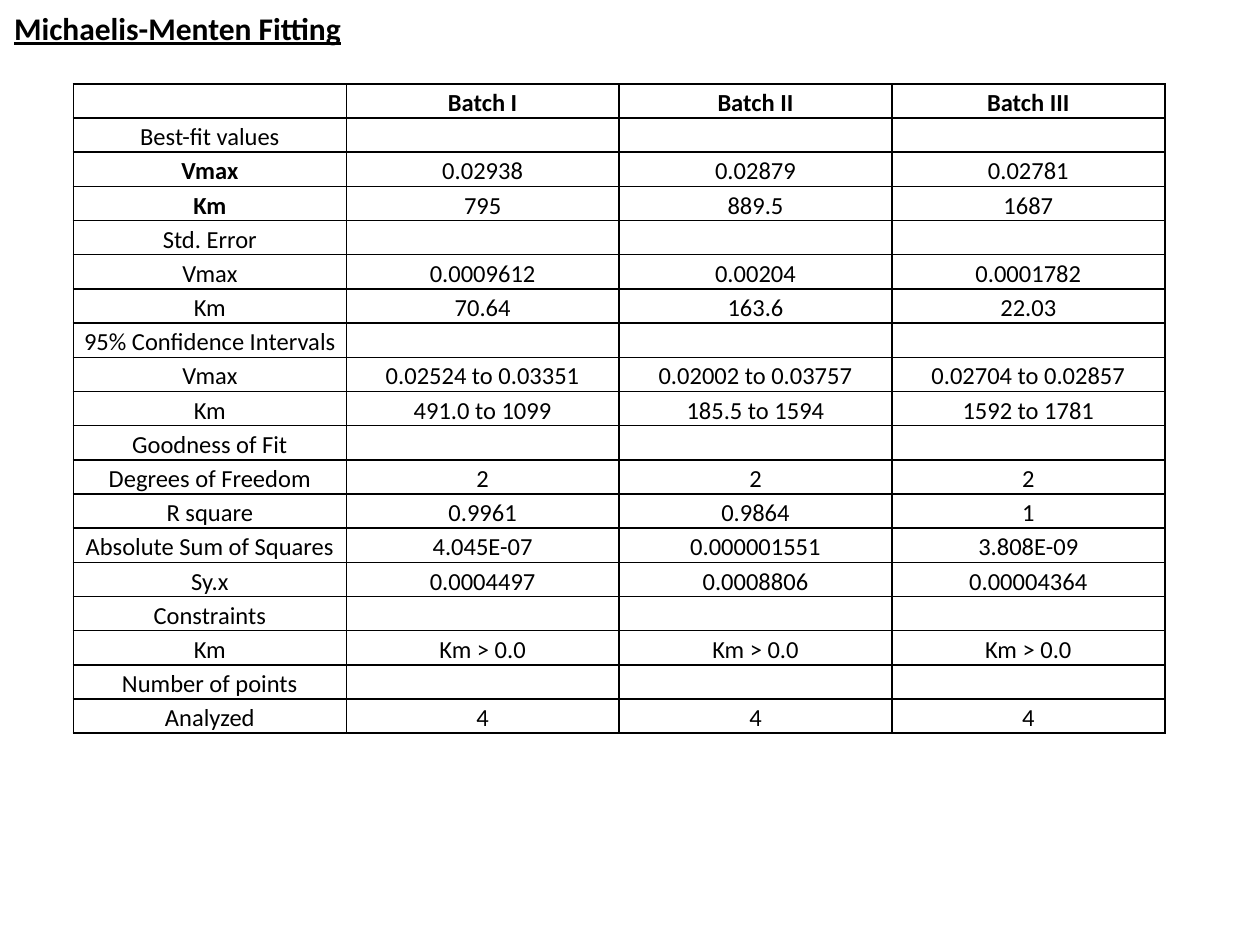
"""Build a slide with a table of Michaelis-Menten fitting results."""
from dataclasses import dataclass

from lxml.etree import SubElement
from pptx import Presentation
from pptx.dml.color import RGBColor
from pptx.enum.text import MSO_ANCHOR, MSO_AUTO_SIZE, PP_ALIGN
from pptx.oxml.ns import qn
from pptx.slide import Slide
from pptx.table import _Cell
from pptx.text.text import _Paragraph
from pptx.util import Cm, Pt

COLORS = {"text": "000000", "border": "000000"}
FONT_NAME = "Calibri"
COLUMN_COUNT = 4
COLUMN_WIDTH = Cm(5.5)
ROW_HEIGHT = Cm(0.69)


@dataclass(frozen=True)
class FitRow:
    label: str
    values: tuple[str, ...] = ("", "", "")
    bold_label: bool = False
    bold_values: bool = False


FIT_ROWS = (
    FitRow("", ("Batch I", "Batch II", "Batch III"), bold_values=True),
    FitRow("Best-fit values"),
    FitRow("Vmax", ("0.02938", "0.02879", "0.02781"), bold_label=True),
    FitRow("Km", ("795", "889.5", "1687"), bold_label=True),
    FitRow("Std. Error"),
    FitRow("Vmax", ("0.0009612", "0.00204", "0.0001782")),
    FitRow("Km", ("70.64", "163.6", "22.03")),
    FitRow("95% Confidence Intervals"),
    FitRow("Vmax", ("0.02524 to 0.03351", "0.02002 to 0.03757", "0.02704 to 0.02857")),
    FitRow("Km", ("491.0 to 1099", "185.5 to 1594", "1592 to 1781")),
    FitRow("Goodness of Fit"),
    FitRow("Degrees of Freedom", ("2", "2", "2")),
    FitRow("R square", ("0.9961", "0.9864", "1")),
    FitRow("Absolute Sum of Squares", ("4.045E-07", "0.000001551", "3.808E-09")),
    FitRow("Sy.x", ("0.0004497", "0.0008806", "0.00004364")),
    FitRow("Constraints"),
    FitRow("Km", ("Km > 0.0", "Km > 0.0", "Km > 0.0")),
    FitRow("Number of points"),
    FitRow("Analyzed", ("4", "4", "4")),
)


def format_paragraph(paragraph: _Paragraph, size: int, bold: bool) -> None:
    paragraph.alignment = PP_ALIGN.CENTER
    font = paragraph.font
    font.name = FONT_NAME
    font.size = Pt(size)
    font.bold = bold
    font.color.rgb = RGBColor.from_string(COLORS["text"])


def add_borders(cell: _Cell) -> None:
    properties = cell._tc.get_or_add_tcPr()
    for position, side in enumerate(("a:lnL", "a:lnR", "a:lnT", "a:lnB")):
        line = SubElement(properties, qn(side), w=str(Pt(1)))
        fill = SubElement(line, qn("a:solidFill"))
        SubElement(fill, qn("a:srgbClr"), val=COLORS["border"])
        properties.insert(position, line)


def fill_cell(cell: _Cell, text: str, bold: bool) -> None:
    cell.text = text
    cell.vertical_anchor = MSO_ANCHOR.BOTTOM
    cell.margin_left = cell.margin_right = cell.margin_top = Cm(0.02)
    cell.margin_bottom = 0
    cell.fill.background()
    format_paragraph(cell.text_frame.paragraphs[0], 14, bold)
    add_borders(cell)


def add_title(slide: Slide) -> None:
    title = slide.shapes.title
    title.left, title.top, title.width, title.height = 0, Cm(0.05), Cm(7.16), Cm(1.02)
    frame = title.text_frame
    frame.text = "Michaelis-Menten Fitting"
    frame.word_wrap = False
    frame.auto_size = MSO_AUTO_SIZE.SHAPE_TO_FIT_TEXT
    frame.vertical_anchor = MSO_ANCHOR.TOP
    format_paragraph(frame.paragraphs[0], 18, True)
    frame.paragraphs[0].font.underline = True


def add_fit_table(slide: Slide) -> None:
    frame = slide.shapes.add_table(
        len(FIT_ROWS), COLUMN_COUNT, Cm(1.48), Cm(1.69),
        COLUMN_WIDTH * COLUMN_COUNT, ROW_HEIGHT * len(FIT_ROWS),
    )
    table = frame.table
    table.first_row = table.horz_banding = False
    for row_index, fit_row in enumerate(FIT_ROWS):
        table.rows[row_index].height = ROW_HEIGHT
        fill_cell(table.cell(row_index, 0), fit_row.label, fit_row.bold_label)
        for column_index, value in enumerate(fit_row.values, start=1):
            fill_cell(table.cell(row_index, column_index), value, fit_row.bold_values)


def main() -> None:
    presentation = Presentation()
    presentation.slide_width, presentation.slide_height = Cm(25.4), Cm(19.05)
    slide = presentation.slides.add_slide(presentation.slide_layouts[5])
    add_fit_table(slide)
    add_title(slide)
    presentation.save("out.pptx")


if __name__ == "__main__":
    main()
